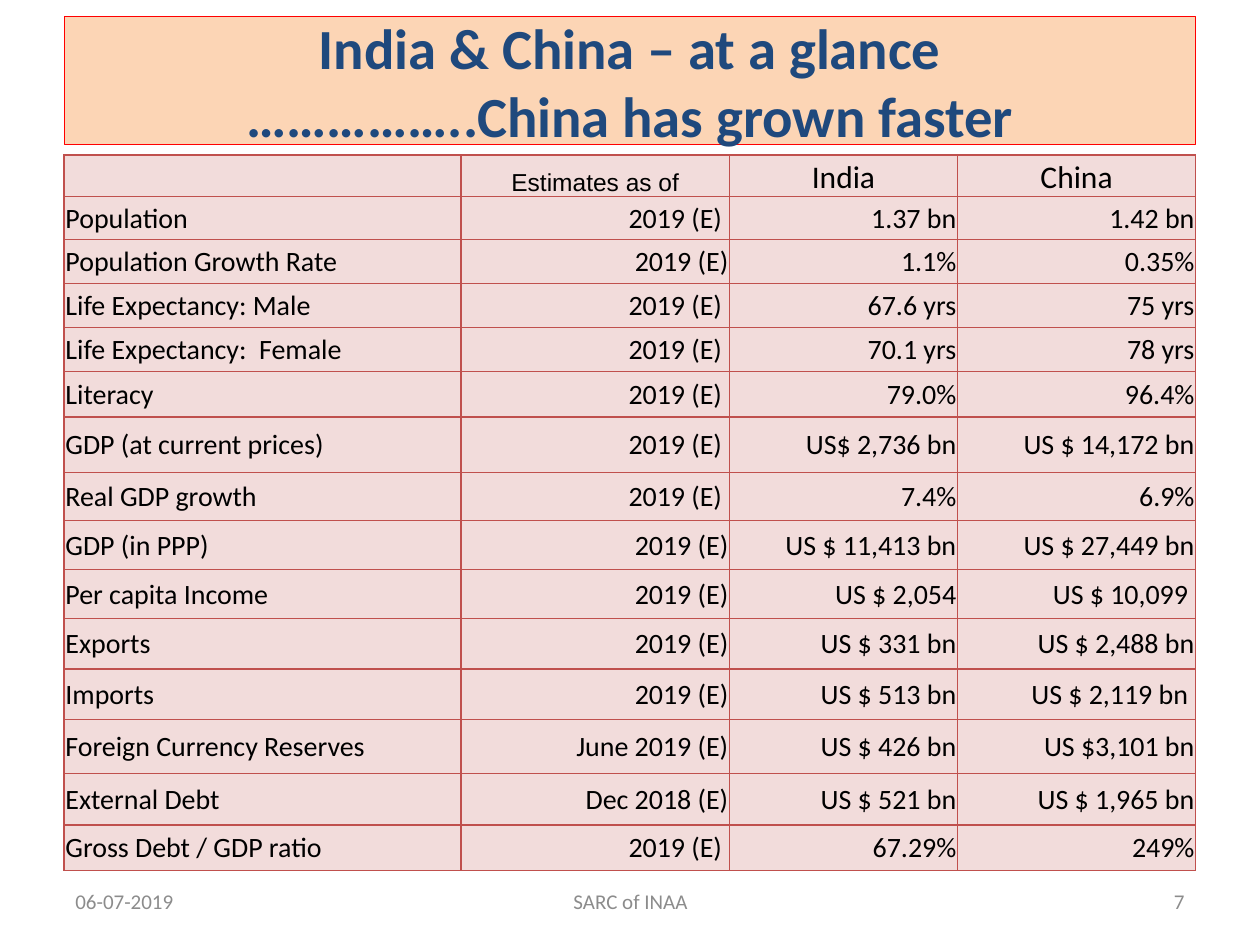
from lxml import etree
from pptx import Presentation, util as u
from pptx.dml.color import RGBColor
from pptx.enum import text
from pptx.oxml import ns


def color(hex_string):
    return RGBColor.from_string(hex_string)


def style(paragraph, size, hex_string, align, name="Calibri"):
    paragraph.alignment = align
    paragraph.font.size = u.Pt(size)
    paragraph.font.name = name
    paragraph.font.color.rgb = color(hex_string)


LEFT, CENTER, RIGHT = text.PP_ALIGN.LEFT, text.PP_ALIGN.CENTER, text.PP_ALIGN.RIGHT
MIDDLE, BOTTOM = text.MSO_ANCHOR.MIDDLE, text.MSO_ANCHOR.BOTTOM

column_widths = [3.15, 2.13, 1.81, 1.89]
row_heights = [0.33, 0.34, 0.35, 0.35, 0.35, 0.36, 0.44, 0.38,
               0.39, 0.39, 0.4, 0.4, 0.43, 0.41, 0.36]
rows = [
    ("", "Estimates as of", "India", "China"),
    ("Population", "2019 (E) ", "1.37 bn", "1.42 bn"),
    ("Population Growth Rate", "2019 (E)", "1.1%", "0.35%"),
    ("Life Expectancy: Male", "2019 (E) ", "67.6 yrs", "75 yrs"),
    ("Life Expectancy:  Female", "2019 (E) ", "70.1 yrs", "78 yrs"),
    ("Literacy", "2019 (E) ", "79.0%", "96.4%"),
    ("GDP (at current prices)", "2019 (E) ", "US$ 2,736 bn", "US $ 14,172 bn"),
    ("Real GDP growth", "2019 (E) ", "7.4%", "6.9%"),
    ("GDP (in PPP)", "2019 (E)", "US $ 11,413 bn", "US $ 27,449 bn"),
    ("Per capita Income", "2019 (E)", "US $ 2,054", "US $ 10,099 "),
    ("Exports", "2019 (E)", "US $ 331 bn", "US $ 2,488 bn"),
    ("Imports", "2019 (E)", "US $ 513 bn", "US $ 2,119 bn "),
    ("Foreign Currency Reserves", "June 2019 (E)", "US $ 426 bn", "US $3,101 bn"),
    ("External Debt", "Dec 2018 (E)", "US $ 521 bn", "US $ 1,965 bn"),
    ("Gross Debt / GDP ratio", "2019 (E) ", "67.29%", "249%"),
]
left, width = u.Inches(0.51), u.Inches(sum(column_widths))

presentation = Presentation()
presentation.slide_width, presentation.slide_height = u.Inches(10), u.Inches(7.5)
slide = presentation.slides.add_slide(presentation.slide_layouts[5])

title = slide.shapes.title
title.left, title.top, title.width, title.height = left, u.Inches(0.13), width, u.Inches(1.02)
title.fill.solid()
title.fill.fore_color.rgb = color("FCD5B5")
title.line.color.rgb = color("FF0000")
title.line.width = u.Pt(0.75)
title.text_frame.text = "India & China – at a glance\v……………..China has grown faster"
title.text_frame.auto_size = text.MSO_AUTO_SIZE.NONE
title.text_frame.vertical_anchor = MIDDLE
style(title.text_frame.paragraphs[0], 32.4, "1F497D", CENTER)
title.text_frame.paragraphs[0].font.bold = True

table = slide.shapes.add_table(len(rows), len(column_widths), left, u.Inches(1.23),
                               width, u.Inches(sum(row_heights))).table
for column, column_width in zip(table.columns, column_widths):
    column.width = u.Inches(column_width)
for row, row_height in zip(table.rows, row_heights):
    row.height = u.Inches(row_height)

for row_index, values in enumerate(rows):
    for column_index, value in enumerate(values):
        cell = table.cell(row_index, column_index)
        cell.text = value
        cell.margin_left = cell.margin_right = cell.margin_top = u.Inches(0.01)
        cell.margin_bottom = 0
        paragraph = cell.text_frame.paragraphs[0]
        if row_index == 0:
            cell.vertical_anchor = BOTTOM
            size, name = (14, "Arial") if column_index == 1 else (18, "Calibri")
            style(paragraph, size, "000000", CENTER, name)
        else:
            cell.vertical_anchor = MIDDLE
            style(paragraph, 16, "000000", RIGHT if column_index else LEFT)
        paragraph.font.bold = False
        properties = cell._tc.get_or_add_tcPr()
        for side in ("a:lnL", "a:lnR", "a:lnT", "a:lnB"):
            border = etree.SubElement(properties, ns.qn(side), w=str(u.Pt(1)))
            border_fill = etree.SubElement(border, ns.qn("a:solidFill"))
            etree.SubElement(border_fill, ns.qn("a:srgbClr"), val="C0504D")
        cell.fill.solid()
        cell.fill.fore_color.rgb = color("F2DCDB")

for footer_left, footer_width, value, align in [
    (7.17, 2.33, "7", RIGHT),
    (3.42, 3.17, "SARC of INAA", CENTER),
    (0.5, 2.33, "06-07-2019", LEFT),
]:
    footer = slide.shapes.add_textbox(u.Inches(footer_left), u.Inches(6.95),
                                      u.Inches(footer_width), u.Inches(0.4))
    footer.text_frame.text = value
    footer.text_frame.word_wrap = True
    footer.text_frame.vertical_anchor = MIDDLE
    style(footer.text_frame.paragraphs[0], 12, "8C8C8C", align)

presentation.save("out.pptx")
